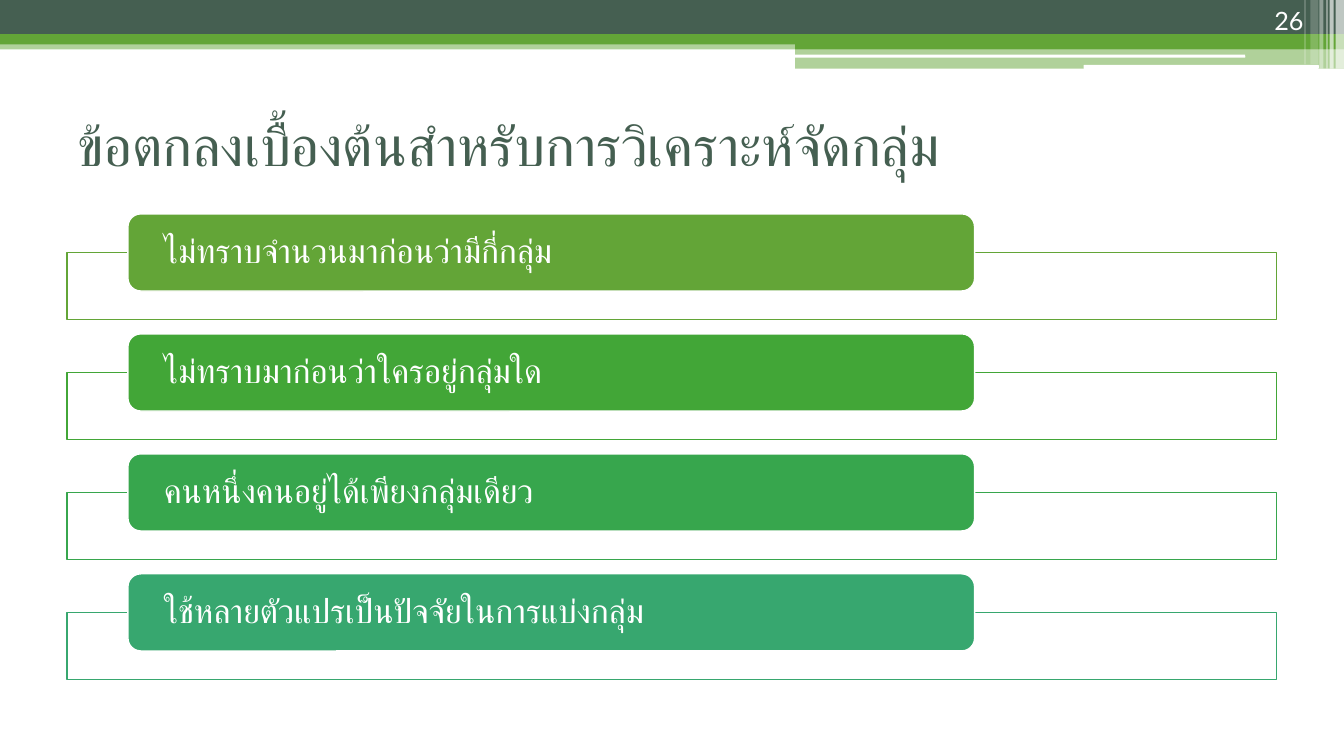
"""Build the slide listing the assumptions of cluster analysis."""
from dataclasses import dataclass

from lxml.etree import SubElement
from pptx import Presentation
from pptx.dml.color import RGBColor
from pptx.enum.shapes import MSO_SHAPE as Preset
from pptx.enum.text import MSO_ANCHOR as Anchor, PP_ALIGN as Align
from pptx.oxml.ns import qn
from pptx.shapes.autoshape import Shape
from pptx.slide import Slide
from pptx.util import Pt

WHITE = RGBColor(0xFF, 0xFF, 0xFF)
DARK_GREEN = RGBColor(0x45, 0x5F, 0x51)
LEAF_GREEN = RGBColor(0x63, 0xA5, 0x37)
GRASS_GREEN = RGBColor(0x42, 0xA6, 0x37)
EMERALD = RGBColor(0x37, 0xA6, 0x4D)
TEAL_GREEN = RGBColor(0x37, 0xA7, 0x6F)

FONT_NAME = "Lato"
PAGE_WIDTH, PAGE_HEIGHT = 960, 540
FRAME_LEFT, FRAME_TOP, FRAME_WIDTH, FRAME_HEIGHT = 48, 180.4, 864, 47.9
LABEL_LEFT, LABEL_TOP, LABEL_WIDTH, LABEL_HEIGHT = 91.4, 152.8, 604.8, 55.1
LABEL_INSET = 23
ROW_STEP = 85.7


@dataclass(frozen=True)
class Area:
    """A rectangle on the page, in points."""
    left: float
    top: float
    width: float
    height: float


@dataclass(frozen=True)
class Band:
    """A plain decorative bar with its opacity in percent."""
    area: Area
    color: RGBColor
    opacity: int = 100
    preset: Preset = Preset.RECTANGLE


@dataclass(frozen=True)
class Assumption:
    """One labelled row of the list."""
    text: str
    color: RGBColor


@dataclass(frozen=True)
class TextStyle:
    """Size, colour and placement of a line of text."""
    size: float
    color: RGBColor
    anchor: Anchor = Anchor.MIDDLE
    align: Align = Align.LEFT


BANDS = [
    Band(Area(0, 28.8, 960, 6.5), LEAF_GREEN, 50),
    Band(Area(0, 0, 960, 24.5), DARK_GREEN),
    Band(Area(0, 24.5, 960, 7.2), LEAF_GREEN),
    Band(Area(568, 28, 392, 7.2), LEAF_GREEN),
    Band(Area(568, 34.9, 392, 14.1), LEAF_GREEN, 50),
    Band(Area(567.5, 39, 322, 2.2), WHITE, preset=Preset.ROUNDED_RECTANGLE),
    Band(Area(774, 46.3, 168, 2.9), WHITE, preset=Preset.ROUNDED_RECTANGLE),
    Band(Area(954, 0, 6, 49), WHITE, 65),
    Band(Area(949.7, 0, 2.9, 49), WHITE, 65),
    Band(Area(947.5, 0, 0.9, 49), WHITE, 60),
    Band(Area(942.5, 0, 2.9, 49), WHITE, 40),
    Band(Area(936, 0, 5.8, 46), WHITE, 20),
    Band(Area(931.7, 0, 0.9, 46), WHITE, 30),
]

ASSUMPTIONS = [
    Assumption("ไม่ทราบจำนวนมาก่อนว่ามีกี่กลุ่ม", LEAF_GREEN),
    Assumption("ไม่ทราบมาก่อนว่าใครอยู่กลุ่มใด", GRASS_GREEN),
    Assumption("คนหนึ่งคนอยู่ได้เพียงกลุ่มเดียว", EMERALD),
    Assumption("ใช้หลายตัวแปรเป็นปัจจัยในการแบ่งกลุ่ม", TEAL_GREEN),
]

TITLE_STYLE = TextStyle(40, DARK_GREEN)
LABEL_STYLE = TextStyle(24, WHITE)
NUMBER_STYLE = TextStyle(18, WHITE, Anchor.BOTTOM, Align.RIGHT)


def place(area: Area) -> tuple[Pt, Pt, Pt, Pt]:
    """Return the area as lengths for a new shape."""
    return Pt(area.left), Pt(area.top), Pt(area.width), Pt(area.height)


def draw_band(page: Slide, band: Band) -> Shape:
    """Draw a filled shape without an outline or shadow."""
    shape = page.shapes.add_shape(band.preset, *place(band.area))
    shape.shadow.inherit = False
    shape.fill.solid()
    shape.fill.fore_color.rgb = band.color
    shape.line.fill.background()
    if band.opacity < 100:
        color = shape.fill._xPr.find(f".//{qn('a:srgbClr')}")
        SubElement(color, qn("a:alpha"), val=str(band.opacity * 1000))
    return shape


def outline(shape: Shape, color: RGBColor) -> None:
    """Give the shape a one-point outline."""
    shape.line.color.rgb = color
    shape.line.width = Pt(1)


def write(box: Shape, text: str, style: TextStyle) -> None:
    """Write one line of text into the box."""
    frame = box.text_frame
    frame.word_wrap = True
    frame.vertical_anchor = style.anchor
    para = frame.paragraphs[0]
    para.text = text
    para.alignment = style.align
    para.font.name = FONT_NAME
    para.font.size = Pt(style.size)
    para.font.color.rgb = style.color


def draw_text(page: Slide, area: Area, text: str, style: TextStyle) -> None:
    """Draw a text box holding one line."""
    write(page.shapes.add_textbox(*place(area)), text, style)


def draw_assumption(page: Slide, row: int, assumption: Assumption) -> None:
    """Draw an outlined frame with its rounded label on top."""
    shift = row * ROW_STEP
    frame_area = Area(FRAME_LEFT, FRAME_TOP + shift, FRAME_WIDTH, FRAME_HEIGHT)
    outline(draw_band(page, Band(frame_area, WHITE, 90)), assumption.color)

    label_area = Area(LABEL_LEFT, LABEL_TOP + shift, LABEL_WIDTH, LABEL_HEIGHT)
    label = draw_band(page, Band(label_area, assumption.color,
                                 preset=Preset.ROUNDED_RECTANGLE))
    outline(label, WHITE)
    write(label, assumption.text, LABEL_STYLE)
    frame = label.text_frame
    frame.margin_left = frame.margin_right = Pt(LABEL_INSET)
    frame.margin_top = frame.margin_bottom = Pt(0)
    para = frame.paragraphs[0]
    para.line_spacing = 0.9
    para.space_after = Pt(8.4)


def main() -> None:
    """Build and save the deck."""
    deck = Presentation()
    deck.slide_width, deck.slide_height = Pt(PAGE_WIDTH), Pt(PAGE_HEIGHT)
    page = deck.slides.add_slide(deck.slide_layouts[6])
    for band in BANDS:
        draw_band(page, band)
    draw_text(page, Area(48, 61.2, 864, 84.2),
              "ข้อตกลงเบื้องต้นสำหรับการวิเคราะห์จัดกลุ่ม", TITLE_STYLE)
    for row, assumption in enumerate(ASSUMPTIONS):
        draw_assumption(page, row, assumption)
    draw_text(page, Area(858.2, 0, 80, 28.8), "26", NUMBER_STYLE)
    deck.save("out.pptx")


if __name__ == "__main__":
    main()
